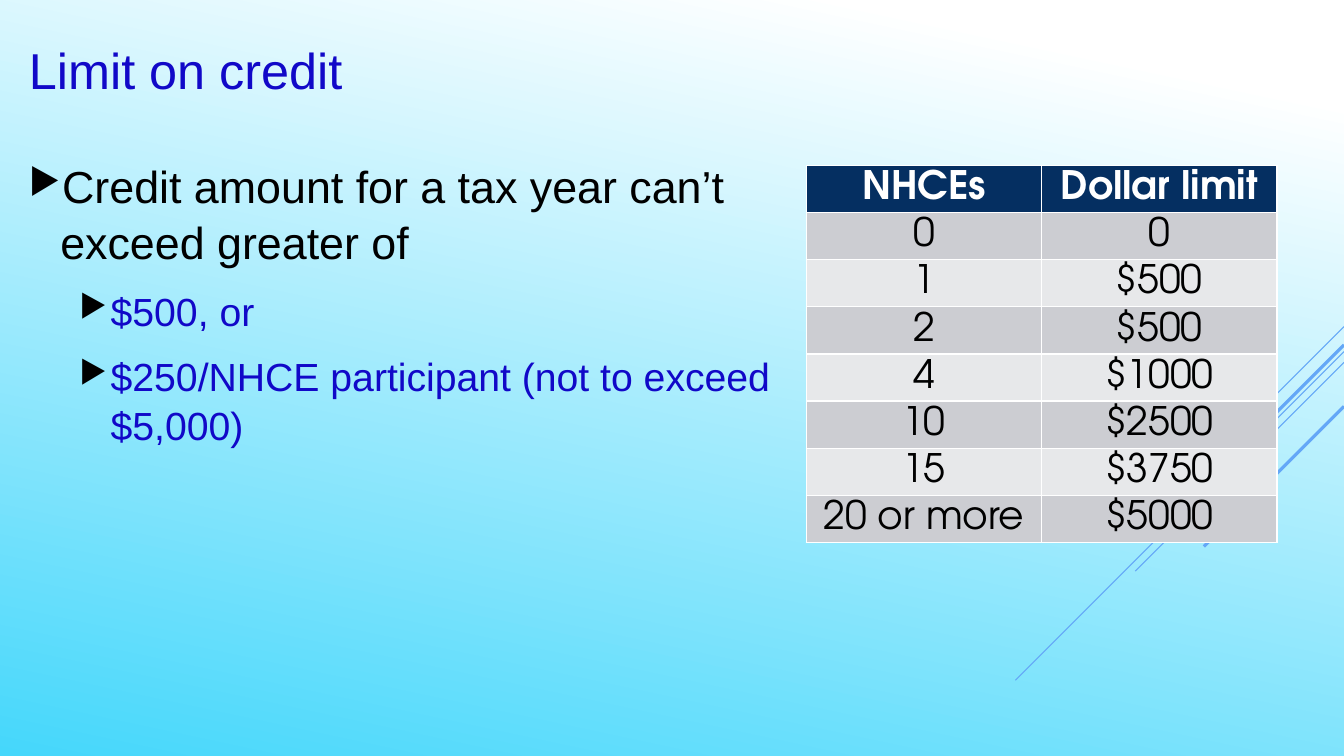
"""Build the "Limit on credit" slide: rules on the left, dollar limits on the right."""
from dataclasses import dataclass

from lxml.etree import SubElement
from pptx import Presentation
from pptx.dml.color import RGBColor as Rgb
from pptx.enum.shapes import MSO_CONNECTOR as Connector
from pptx.enum.text import MSO_ANCHOR as Anchor, PP_ALIGN as Align
from pptx.oxml.ns import qn
from pptx.util import Cm, Pt


@dataclass(frozen=True)
class Theme:
    text_font: str = "Arial"
    table_font: str = "TeX Gyre Adventor"
    title_size: int = 36
    body_size: int = 32
    detail_size: int = 28
    black: Rgb = Rgb(0x00, 0x00, 0x00)
    white: Rgb = Rgb(0xFF, 0xFF, 0xFF)
    blue: Rgb = Rgb(0x11, 0x08, 0xC8)
    sky: Rgb = Rgb(0x45, 0xD7, 0xFB)
    ray: Rgb = Rgb(0x64, 0xA7, 0xF7)
    header: Rgb = Rgb(0x05, 0x2F, 0x61)
    bands: tuple = (Rgb(0xE7, 0xE8, 0xEA), Rgb(0xCC, 0xCD, 0xD2))


theme = Theme()


def write(paragraph, text, *, size, color, font=theme.text_font, bold=False, align=Align.LEFT):
    """Put formatted text into a paragraph."""
    paragraph.alignment = align
    run = paragraph.add_run()
    run.text = text
    run.font.name = font
    run.font.size = Pt(size)
    run.font.bold = bold
    run.font.color.rgb = color


def add_bullet(paragraph, left):
    """Give a paragraph a hanging triangle bullet."""
    properties = paragraph._p.get_or_add_pPr()
    properties.set("marL", str(Cm(left)))
    properties.set("indent", str(-Cm(0.79)))
    bullet_color = SubElement(properties, qn("a:buClr"))
    SubElement(bullet_color, qn("a:srgbClr"), val=str(theme.black))
    SubElement(properties, qn("a:buSzPct"), val="80000")
    SubElement(properties, qn("a:buChar"), char="▶")


presentation = Presentation()
presentation.slide_width = Cm(33.87)
presentation.slide_height = Cm(19.05)
slide = presentation.slides.add_slide(presentation.slide_layouts[6])

background = slide.background.fill
background.gradient()
background.gradient_angle = 258
for stop, position, color in zip(background.gradient_stops, (0.1, 1), (theme.white, theme.sky)):
    stop.position = position
    stop.color.rgb = color

RIGHT_EDGE = 33.87
for top, reach, weight in [
    (8.23, 2.54, 0.75),
    (8.86, 8.28, 0.75),
    (9.13, 5.26, 0.75),
    (8.69, 4.85, 2.25),
    (10.24, 3.53, 2.25),
]:
    ray = slide.shapes.add_connector(
        Connector.STRAIGHT, Cm(RIGHT_EDGE), Cm(top), Cm(RIGHT_EDGE - reach), Cm(top + reach)
    )
    ray.line.color.rgb = theme.ray
    ray.line.width = Pt(weight)
    SubElement(ray._element.spPr, qn("a:effectLst"))

title = slide.shapes.add_textbox(Cm(0.48), Cm(0.03), Cm(29.57), Cm(3.43)).text_frame
title.word_wrap = True
title.vertical_anchor = Anchor.MIDDLE
write(title.paragraphs[0], "Limit on credit", size=theme.title_size, color=theme.blue)

body = slide.shapes.add_textbox(Cm(0.48), Cm(3.83), Cm(19.66), Cm(14.97)).text_frame
body.word_wrap = True
for index, (text, left, size, color) in enumerate([
    ("Credit amount for a tax year can’t exceed greater of", 0.79, theme.body_size, theme.black),
    ("$500, or", 2.06, theme.detail_size, theme.blue),
    ("$250/NHCE participant (not to exceed $5,000)", 2.06, theme.detail_size, theme.blue),
]):
    paragraph = body.add_paragraph() if index else body.paragraphs[0]
    add_bullet(paragraph, left)
    paragraph.line_spacing = 1.04
    paragraph.space_before = Pt(0.2 * size if index else 0)
    paragraph.space_after = Pt(6)
    write(paragraph, text, size=size, color=color)

limits = [
    ("NHCEs", "Dollar limit"),
    ("0", "0"),
    ("1", "$500"),
    ("2", "$500"),
    ("4", "$1000"),
    ("10", "$2500"),
    ("15", "$3750"),
    ("20 or more", "$5000"),
]
ROW_HEIGHT = 1.17
table = slide.shapes.add_table(
    len(limits), 2, Cm(20.32), Cm(4.17), Cm(11.86), Cm(ROW_HEIGHT * len(limits))
).table
for row_index, values in enumerate(limits):
    is_header = row_index == 0
    for column_index, value in enumerate(values):
        cell = table.cell(row_index, column_index)
        cell.margin_top = cell.margin_bottom = 0
        cell.vertical_anchor = Anchor.MIDDLE
        cell.fill.solid()
        cell.fill.fore_color.rgb = theme.header if is_header else theme.bands[row_index % 2]
        write(
            cell.text_frame.paragraphs[0], value, size=theme.detail_size,
            color=theme.white if is_header else theme.black,
            font=theme.table_font, bold=is_header, align=Align.CENTER,
        )

presentation.save("out.pptx")
